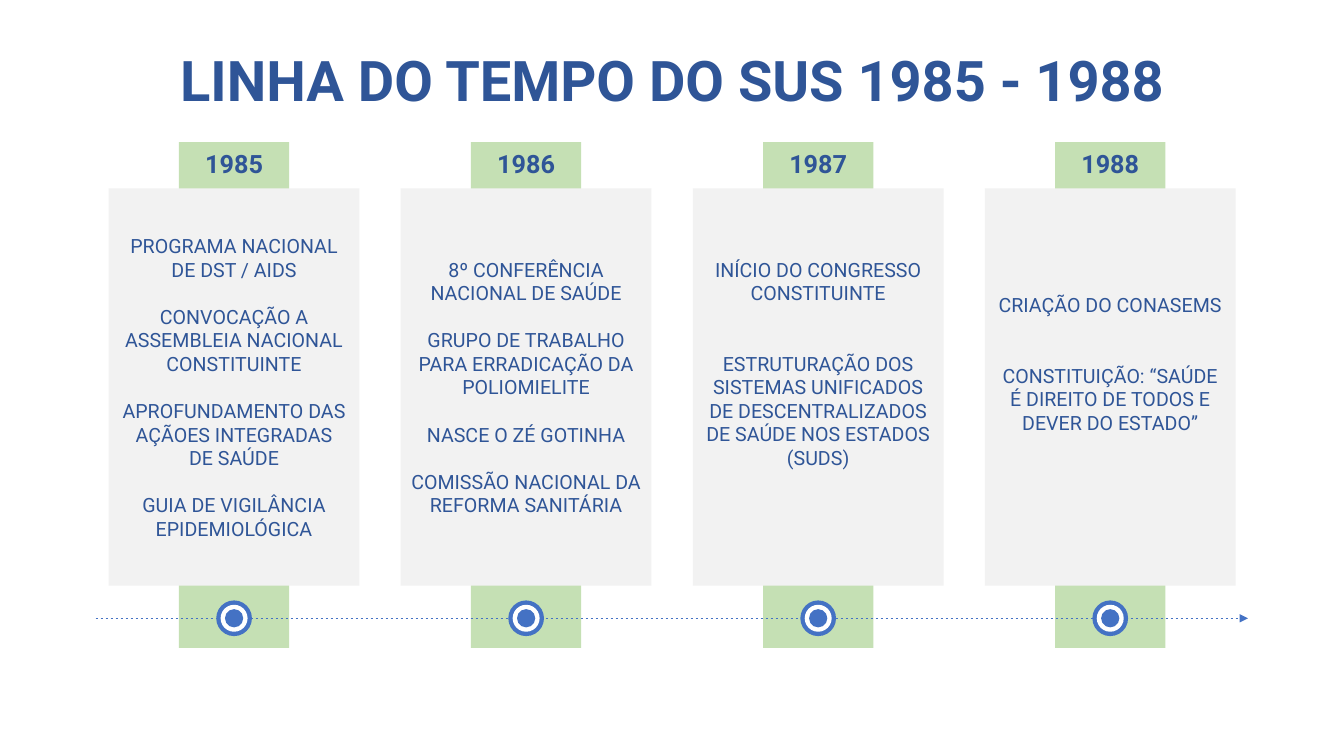
from lxml import etree
from pptx import Presentation
from pptx import util as u
from pptx.dml.color import RGBColor
from pptx.enum import dml, shapes, text
from pptx.oxml.ns import qn

COLORS = {"navy": "2F5597", "blue": "4472C4", "green": "C5E0B4",
          "grey": "F2F2F2", "white": "FFFFFF"}
FONT = "Roboto"
LINE = 16.9  # height in points of one line of card text

# Year, blank lines between events, blank lines below, events
YEARS = [
    ("1985", 1, 0, ["PROGRAMA NACIONAL DE DST / AIDS",
                    "CONVOCAÇÃO A ASSEMBLEIA NACIONAL CONSTITUINTE",
                    "APROFUNDAMENTO DAS AÇÃOES INTEGRADAS\vDE SAÚDE",
                    "GUIA DE VIGILÂNCIA EPIDEMIOLÓGICA"]),
    ("1986", 1, 0, ["8º CONFERÊNCIA NACIONAL DE SAÚDE",
                    "GRUPO DE TRABALHO PARA ERRADICAÇÃO DA POLIOMIELITE",
                    "NASCE O ZÉ GOTINHA",
                    "COMISSÃO NACIONAL DA REFORMA SANITÁRIA"]),
    ("1987", 2, 2, ["INÍCIO DO CONGRESSO CONSTITUINTE",
                    "ESTRUTURAÇÃO DOS SISTEMAS UNIFICADOS DE DESCENTRALIZADOS "
                    "DE SAÚDE NOS ESTADOS (SUDS)"]),
    ("1988", 2, 2, ["CRIAÇÃO DO CONASEMS",
                    "CONSTITUIÇÃO: “SAÚDE É DIREITO DE TODOS E DEVER DO ESTADO”"]),
]

# Column geometry in cm
LEFT, TOP, PITCH = 2.74, 3.58, 7.36
CARD_W, CARD_H, CARD_DROP = 6.32, 10.01, 1.17
TAB_W, TAB_H = 2.78, 12.75
AXIS_Y = 15.58


def rgb(name):
    return RGBColor.from_string(COLORS[name])


def cm_box(*lengths):
    return [u.Cm(v) for v in lengths]


def write(p, words, size, bold=False):
    p.text = words
    p.alignment = text.PP_ALIGN.CENTER
    for r in p.runs:
        for key, value in {"name": FONT, "size": u.Pt(size), "bold": bold}.items():
            setattr(r.font, key, value)
        r.font.color.rgb = rgb("navy")
    for br in p._p.findall(qn("a:br")):
        etree.SubElement(br, qn("a:rPr"), sz=str(size * 100))


def add_filled(parent, kind, fill, *box):
    sp = parent.add_shape(kind, *cm_box(*box))
    sp.shadow.inherit = False
    sp.fill.solid()
    sp.fill.fore_color.rgb = rgb(fill)
    sp.line.fill.background()
    return sp


def add_title(s, left, top, width, height):
    title = s.shapes.title
    title.left, title.top, title.width, title.height = cm_box(left, top, width, height)
    title.text_frame.vertical_anchor = text.MSO_ANCHOR.MIDDLE
    p = title.text_frame.paragraphs[0]
    write(p, "LINHA DO TEMPO DO SUS 1985 - 1988", 40, True)
    p.line_spacing = 0.9


def add_column(s, left, top, year, gap, below, events):
    rect = shapes.MSO_SHAPE.RECTANGLE
    tab_left = left + (CARD_W - TAB_W) / 2
    # Green band behind the card
    add_filled(s.shapes, rect, "green", tab_left, top, TAB_W, TAB_H)
    # Card with the events
    card = add_filled(s.shapes, rect, "grey", left, top + CARD_DROP, CARD_W, CARD_H)
    tf = card.text_frame
    tf.word_wrap = True
    tf.vertical_anchor = text.MSO_ANCHOR.MIDDLE
    tf.margin_bottom = u.Pt(3.6 + below * LINE)
    for i, event in enumerate(events):
        p = tf.add_paragraph() if i else tf.paragraphs[0]
        write(p, event, 14)
        if i:
            p.space_before = u.Pt(gap * LINE)
    # Year label
    label = s.shapes.add_textbox(*cm_box(tab_left, top + 0.03, TAB_W, 1.03))
    label.text_frame.word_wrap = True
    write(label.text_frame.paragraphs[0], year, 18, True)


def add_axis(s, left, right, y):
    axis = s.shapes.add_connector(shapes.MSO_CONNECTOR.STRAIGHT,
                                  *cm_box(left, y, right, y))
    axis.line.color.rgb = rgb("blue")
    axis.line.width = u.Pt(0.5)
    axis.line.dash_style = dml.MSO_LINE.DASH
    etree.SubElement(axis.line._get_or_add_ln(), qn("a:tailEnd"), type="triangle")
    etree.SubElement(axis._element.spPr, qn("a:effectLst"))


def add_marker(s, x, y):
    group = s.shapes.add_group_shape()
    for size, fill in ((0.9, "blue"), (0.68, "white"), (0.46, "blue")):
        add_filled(group.shapes, shapes.MSO_SHAPE.OVAL, fill,
                   x - size / 2, y - size / 2, size, size)


def main():
    prs = Presentation()
    prs.slide_width, prs.slide_height = cm_box(33.87, 19.05)
    s = prs.slides.add_slide(prs.slide_layouts.get_by_name("Title Only"))
    add_title(s, 2.33, 1.02, 29.21, 2.18)
    lefts = [LEFT + i * PITCH for i in range(len(YEARS))]
    for left, column in zip(lefts, YEARS):
        add_column(s, left, TOP, *column)
    add_axis(s, 2.41, 31.45, AXIS_Y)
    for left in lefts:
        add_marker(s, left + CARD_W / 2, AXIS_Y)
    prs.save("out.pptx")


if __name__ == "__main__":
    main()
